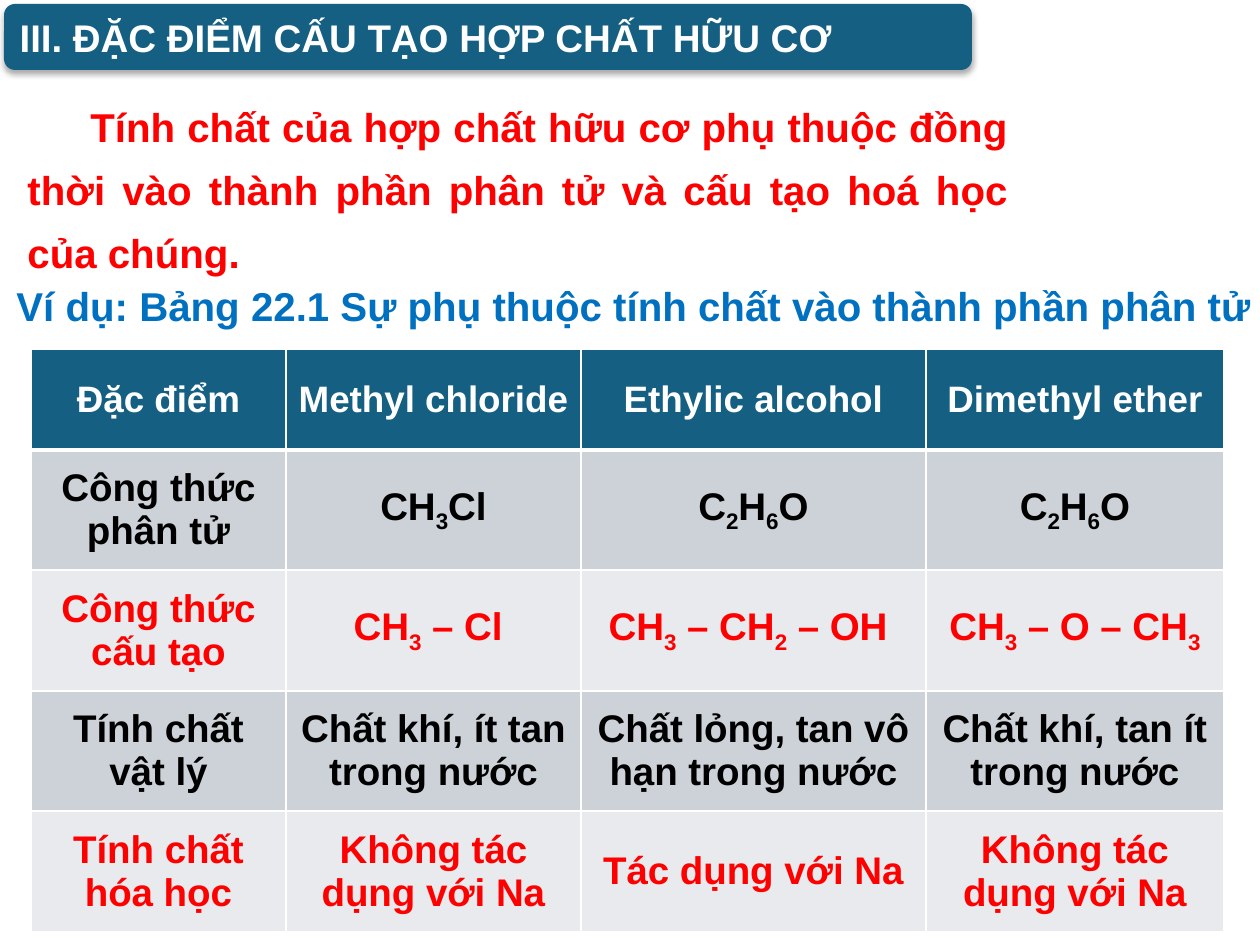
"""Build the slide on the structure of organic compounds."""
from itertools import groupby
from lxml.etree import SubElement
from pptx import Presentation
from pptx.dml.color import RGBColor
from pptx.enum.shapes import MSO_SHAPE
from pptx.enum.text import MSO_ANCHOR, MSO_AUTO_SIZE, PP_ALIGN
from pptx.oxml import parse_xml
from pptx.oxml.ns import nsdecls, qn
from pptx.util import Pt

PX = 914400 // 126
HEX = {"teal": "156082", "red": "FF0000", "blue": "0070C0", "white": "FFFFFF",
       "black": "000000", "dark": "CCD2D8", "light": "E8EAED"}
TITLE = "III. ĐẶC ĐIỂM CẤU TẠO HỢP CHẤT HỮU CƠ"
RULE = ("Tính chất của hợp chất hữu cơ phụ thuộc đồng thời vào thành phần "
        "phân tử và cấu tạo hoá học của chúng.")
LEAD = "Ví dụ: Bảng 22.1 Sự phụ thuộc tính chất vào thành phần phân tử"
ROWS = [
    ("Đặc điểm", "Methyl chloride", "Ethylic alcohol", "Dimethyl ether"),
    ("Công thức phân tử", "CH3Cl", "C2H6O", "C2H6O"),
    ("Công thức cấu tạo", "CH3 – Cl ", "CH3 – CH2 – OH ", "CH3 – O – CH3"),
    ("Tính chất vật lý", "Chất khí, ít tan trong nước",
     "Chất lỏng, tan vô hạn trong nước", "Chất khí, tan ít trong nước"),
    ("Tính chất hóa học", "Không tác dụng với Na", "Tác dụng với Na",
     "Không tác dụng với Na"),
]
WIDTHS = [255, 295, 345, 298]
HEIGHTS = [101, 120, 121, 120, 121]


def box(*at):
    return [n * PX for n in at]


def tint(name):
    return RGBColor.from_string(HEX[name])


def write(para, text, size, color, align, low=False):
    para.alignment = align
    run = para.add_run()
    run.text = text
    font = run.font
    font.name, font.size, font.bold = "Arial", Pt(size), True
    font.color.rgb = tint(color)
    if low:
        font._element.set("baseline", "-25000")


def label(slide, at, text, color, align, wrap):
    frame = slide.shapes.add_textbox(*box(*at)).text_frame
    frame.word_wrap = wrap
    frame.auto_size = MSO_AUTO_SIZE.SHAPE_TO_FIT_TEXT
    para = frame.paragraphs[0]
    write(para, text, 23, color, align)
    return para


def banner(slide):
    shape = slide.shapes.add_shape(MSO_SHAPE.ROUNDED_RECTANGLE, *box(4, 4, 968, 66))
    shape.fill.solid()
    shape.fill.fore_color.rgb = tint("teal")
    shape.line.fill.background()
    shape.shadow.inherit = False
    glow = shape._element.spPr.find(qn("a:effectLst"))
    glow.append(parse_xml(
        f'<a:outerShdw {nsdecls("a")} blurRad="{Pt(3.5)}" dist="{Pt(2.2)}" '
        'dir="5400000" algn="t" rotWithShape="0"><a:srgbClr val="000000">'
        '<a:alpha val="32000"/></a:srgbClr></a:outerShdw>'))
    frame = shape.text_frame
    frame.vertical_anchor = MSO_ANCHOR.MIDDLE
    write(frame.paragraphs[0], TITLE, 22, "white", PP_ALIGN.JUSTIFY)


def edge(cell, row):
    thick = {(0, "B"): 3, (1, "T"): 3}
    for side in "LRTB":
        line = SubElement(cell._tc.get_or_add_tcPr(), qn(f"a:ln{side}"),
                          w=str(Pt(thick.get((row, side), 1))))
        SubElement(SubElement(line, qn("a:solidFill")), qn("a:srgbClr"), val=HEX["white"])


def grid(slide):
    at = box(31, 349, sum(WIDTHS), sum(HEIGHTS))
    table = slide.shapes.add_table(len(ROWS), len(WIDTHS), *at).table
    for col, width in zip(table.columns, WIDTHS):
        col.width = width * PX
    for r, (row, height) in enumerate(zip(ROWS, HEIGHTS)):
        table.rows[r].height = height * PX
        fill = "teal" if r == 0 else "dark" if r % 2 else "light"
        color = "white" if r == 0 else "black" if r % 2 else "red"
        for c, text in enumerate(row):
            cell = table.cell(r, c)
            edge(cell, r)
            cell.fill.solid()
            cell.fill.fore_color.rgb = tint(fill)
            cell.vertical_anchor = MSO_ANCHOR.MIDDLE
            para = cell.text_frame.paragraphs[0]
            for low, part in groupby(text, str.isdigit):
                write(para, "".join(part), 22 if r else 21, color, PP_ALIGN.CENTER, low)


def main():
    deck = Presentation()
    deck.slide_width, deck.slide_height = box(1260, 945)
    slide = deck.slides.add_slide(deck.slide_layouts[6])
    banner(slide)
    para = label(slide, (15, 82, 1007, 197), RULE, "red", PP_ALIGN.JUSTIFY, True)
    para.line_spacing = 1.3
    para._p.get_or_add_pPr().set("indent", str(63 * PX))
    label(slide, (4, 275, 1275, 62), LEAD, "blue", PP_ALIGN.LEFT, False)
    grid(slide)
    deck.save("out.pptx")


if __name__ == "__main__":
    main()
